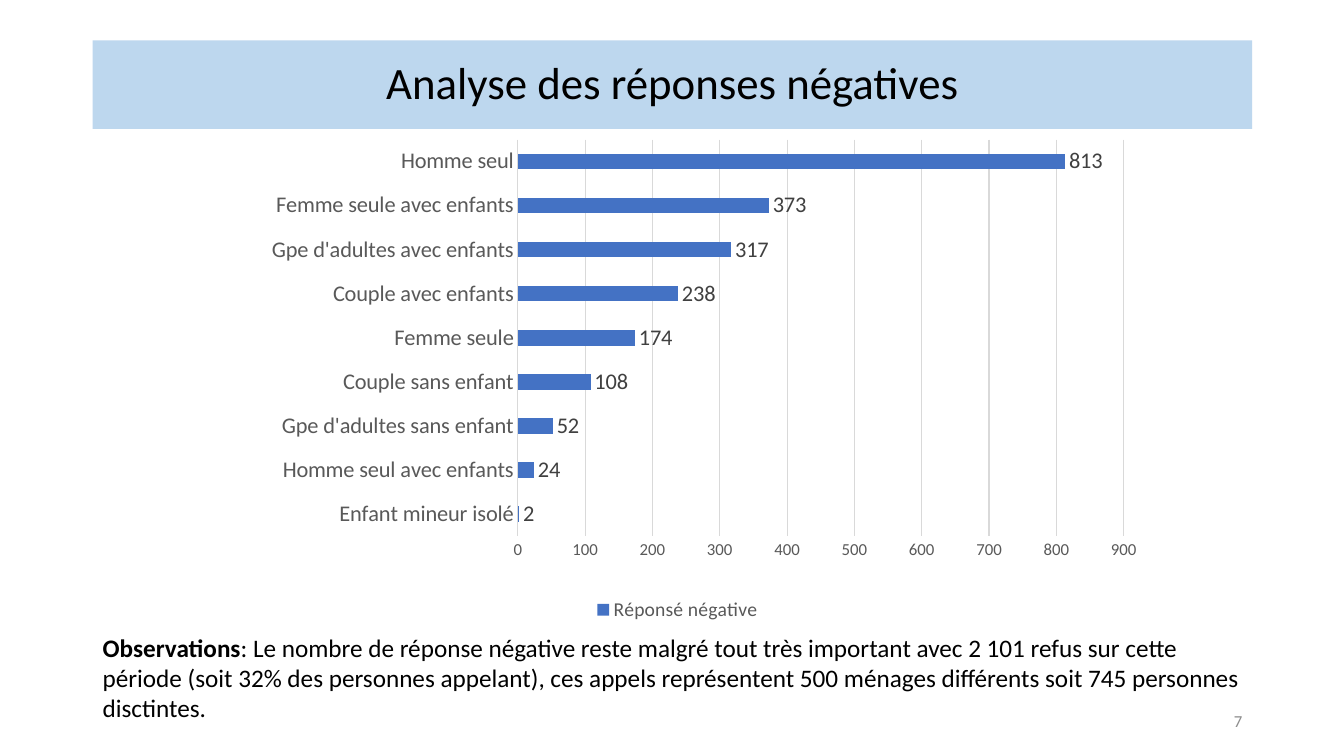
from dataclasses import dataclass

from lxml.etree import SubElement
from pptx import Presentation
from pptx.chart.data import CategoryChartData as ChartData
from pptx.dml.color import RGBColor as Rgb
from pptx.enum.chart import XL_CHART_TYPE as Kind
from pptx.enum.chart import XL_LABEL_POSITION as Spot
from pptx.enum.chart import XL_LEGEND_POSITION as Side
from pptx.enum.chart import XL_TICK_MARK as Tick
from pptx.enum.shapes import MSO_SHAPE as Form
from pptx.enum.text import MSO_ANCHOR as Anchor
from pptx.enum.text import PP_ALIGN as Align
from pptx.oxml.ns import qn
from pptx.util import Inches, Pt


@dataclass(frozen=True)
class Theme:
    face: str = "Calibri"
    ink: str = "000000"
    label: str = "404040"
    axis: str = "595959"
    grid: str = "D9D9D9"
    page: str = "8C8C8C"
    bar: str = "4472C4"
    band: str = "BDD7EE"
    title: int = 32
    body: int = 18
    cat: int = 16
    key: int = 14
    small: int = 12


THEME = Theme()
LEFT, WIDTH = 0.92, 11.5
PLOT = {"x": 0.345, "y": 0.054, "w": 0.588, "h": 0.771}
COUNTS = {
    "Enfant mineur isolé": 2,
    "Homme seul avec enfants": 24,
    "Gpe d'adultes sans enfant": 52,
    "Couple sans enfant": 108,
    "Femme seule": 174,
    "Couple avec enfants": 238,
    "Gpe d'adultes avec enfants": 317,
    "Femme seule avec enfants": 373,
    "Homme seul": 813,
}
NOTE = (
    ": Le nombre de réponse négative reste malgré tout très important avec "
    "2 101 refus sur cette période (soit 32% des personnes appelant), ces appels "
    "représentent 500 ménages différents soit 745 personnes disctintes."
)


def style(font, size, color, bold=False):
    font.name, font.size, font.bold = THEME.face, Pt(size), bold
    font.color.rgb = Rgb.from_string(color)


def write(frame, runs, size, color, align=Align.LEFT, anchor=Anchor.TOP):
    """Fill a frame with one paragraph of (text, bold) runs."""
    frame.word_wrap = True
    frame.vertical_anchor = anchor
    para = frame.paragraphs[0]
    para.alignment = align
    for text, bold in runs:
        run = para.add_run()
        run.text = text
        style(run.font, size, color, bold)
    return para


def add_text(slide, box, *args, **opts):
    shape = slide.shapes.add_textbox(*map(Inches, box))
    write(shape.text_frame, *args, **opts)


def add_band(slide, box, text):
    shape = slide.shapes.add_shape(Form.RECTANGLE, *map(Inches, box))
    shape.shadow.inherit = False
    shape.fill.solid()
    shape.fill.fore_color.rgb = Rgb.from_string(THEME.band)
    shape.line.fill.background()
    para = write(shape.text_frame, [(text, False)], THEME.title, THEME.ink,
                 Align.CENTER, Anchor.MIDDLE)
    para.line_spacing = 0.9


def rule(line):
    line.color.rgb = Rgb.from_string(THEME.grid)
    line.width = Pt(0.75)


def set_plot(chart):
    """Fix the inner plot area as fractions of the chart."""
    area = chart.plots[0]._element.getparent()
    for old in area.findall(qn("c:layout")):
        area.remove(old)
    layout = SubElement(area, qn("c:layout"))
    area.insert(0, layout)
    manual = SubElement(layout, qn("c:manualLayout"))
    marks = {"layoutTarget": "inner", "xMode": "edge", "yMode": "edge", **PLOT}
    for tag, val in marks.items():
        SubElement(manual, qn(f"c:{tag}")).set("val", str(val))


def set_axes(chart):
    cat, val = chart.category_axis, chart.value_axis
    for axis, size in ((cat, THEME.cat), (val, THEME.small)):
        axis.major_tick_mark = axis.minor_tick_mark = Tick.NONE
        style(axis.tick_labels.font, size, THEME.axis)
    rule(cat.format.line)
    val.format.line.fill.background()
    val.minimum_scale, val.maximum_scale, val.major_unit = 0, 900, 100
    val.has_major_gridlines = True
    rule(val.major_gridlines.format.line)


def add_bars(slide, box):
    data = ChartData()
    data.categories = list(COUNTS)
    data.add_series("Réponsé négative", list(COUNTS.values()))
    chart = slide.shapes.add_chart(
        Kind.BAR_CLUSTERED, *map(Inches, box), data).chart
    chart.has_title = False
    style(chart.font, 10, THEME.ink)
    set_plot(chart)
    set_axes(chart)

    # Bars and their values
    plot = chart.plots[0]
    plot.gap_width = 182
    plot.vary_by_categories = False
    fill = plot.series[0].format.fill
    fill.solid()
    fill.fore_color.rgb = Rgb.from_string(THEME.bar)
    labels = plot.series[0].data_labels
    labels.show_value = True
    labels.position = Spot.OUTSIDE_END
    style(labels.font, THEME.cat, THEME.label)

    # Legend
    chart.has_legend = True
    chart.legend.position = Side.BOTTOM
    chart.legend.include_in_layout = False
    style(chart.legend.font, THEME.key, THEME.axis)


def main():
    deck = Presentation()
    deck.slide_width, deck.slide_height = Inches(13.33), Inches(7.5)
    slide = deck.slides.add_slide(deck.slide_layouts[6])

    # Page number
    add_text(slide, (9.42, 6.95, 3, 0.4), [("7", False)], THEME.small,
             THEME.page, align=Align.RIGHT, anchor=Anchor.MIDDLE)
    # Chart and remarks
    add_bars(slide, (1.61, 1.11, 10.22, 5.1))
    add_text(slide, (LEFT, 6.22, WIDTH, 1.01),
             [("Observations", True), (NOTE, False)], THEME.body, THEME.ink)
    # Title
    add_band(slide, (LEFT, 0.4, WIDTH, 0.88), "Analyse des réponses négatives")

    deck.save("out.pptx")


if __name__ == "__main__":
    main()
